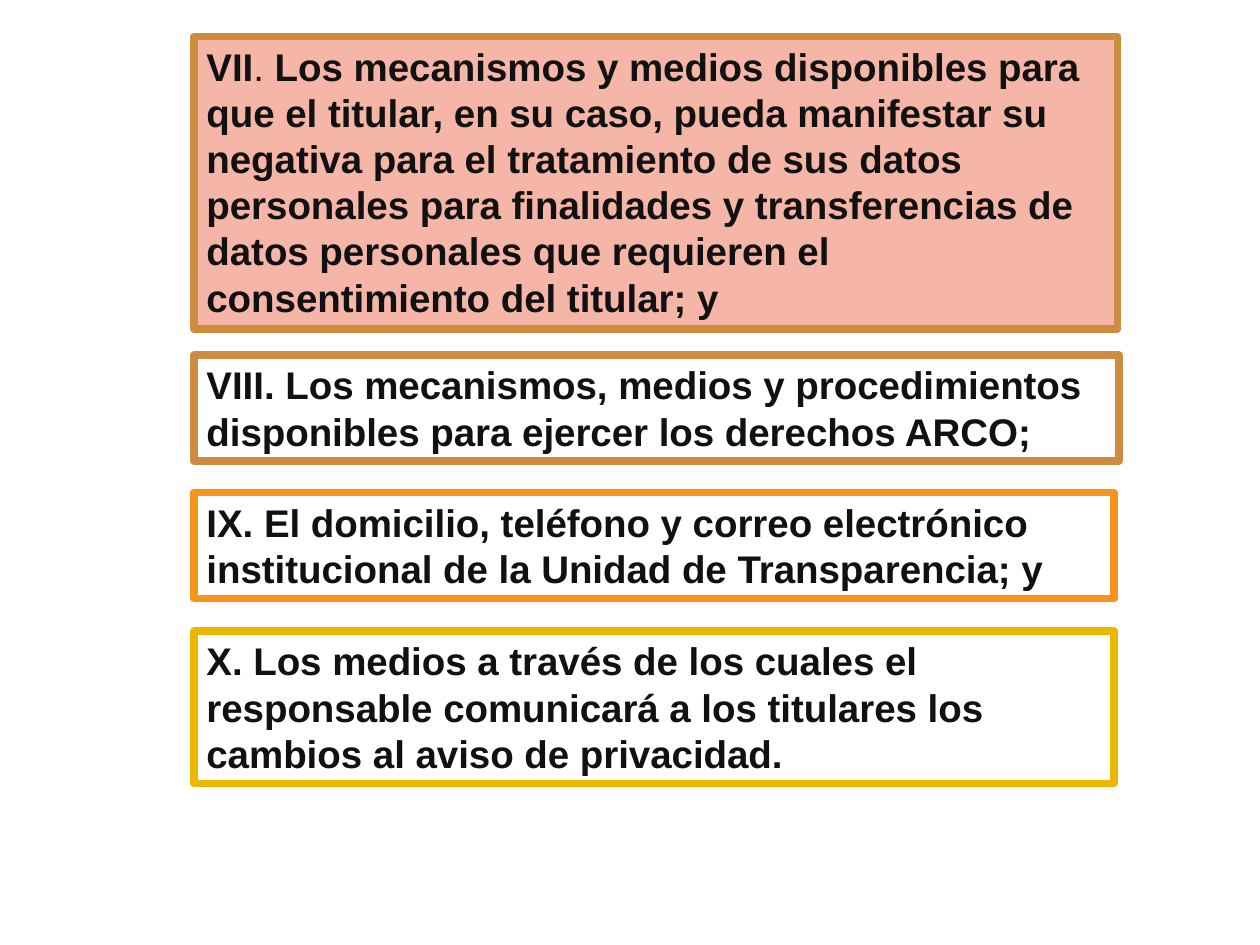
from pptx import Presentation
from pptx import util as u
from pptx.dml.color import RGBColor
from pptx.enum import text

COLORS = {"ink": "111111", "bronze": "CE8D3E", "orange": "F8931D",
          "gold": "EAB800", "salmon": "F5B6A7"}
LEFT = 1.54

# top, width, height, line colour, fill colour, (text, bold) runs
CLAUSES = [
    (0.29, 7.33, 2.32, "bronze", "salmon", [
        ("VII", True), (". ", False),
        ("Los mecanismos y medios disponibles para que el titular, en su caso, "
         "pueda manifestar su negativa para el tratamiento de sus datos personales "
         "para finalidades y transferencias de datos personales que requieren el "
         "consentimiento del titular; y", True)]),
    (2.82, 7.34, 0.84, "bronze", None, [
        ("VIII. Los mecanismos, medios y procedimientos disponibles para ejercer "
         "los derechos ARCO;", True)]),
    (3.91, 7.3, 0.84, "orange", None, [
        ("IX. El domicilio, teléfono y correo electrónico institucional de la "
         "Unidad de Transparencia; y", True)]),
    (5.01, 7.3, 1.21, "gold", None, [
        ("X. Los medios a través de los cuales el responsable comunicará a los "
         "titulares los cambios al aviso de privacidad.", True)]),
]


def rgb(name):
    return RGBColor.from_string(COLORS[name])


prs = Presentation()
prs.slide_width, prs.slide_height = u.Inches(10), u.Inches(7.5)
s = prs.slides.add_slide(prs.slide_layouts[6])

for top, width, height, line, fill, runs in CLAUSES:
    sp = s.shapes.add_textbox(*map(u.Inches, (LEFT, top, width, height)))
    sp.line.color.rgb = rgb(line)
    sp.line.width = u.Pt(4.33)
    if fill:
        sp.fill.solid()
        sp.fill.fore_color.rgb = rgb(fill)
    tf = sp.text_frame
    tf.word_wrap = True
    tf.auto_size = text.MSO_AUTO_SIZE.SHAPE_TO_FIT_TEXT
    for words, bold in runs:
        r = tf.paragraphs[0].add_run()
        r.text = words
        r.font.name = "Arial"
        r.font.size = u.Pt(22)
        r.font.bold = bold
        r.font.color.rgb = rgb("ink")

prs.save("out.pptx")
